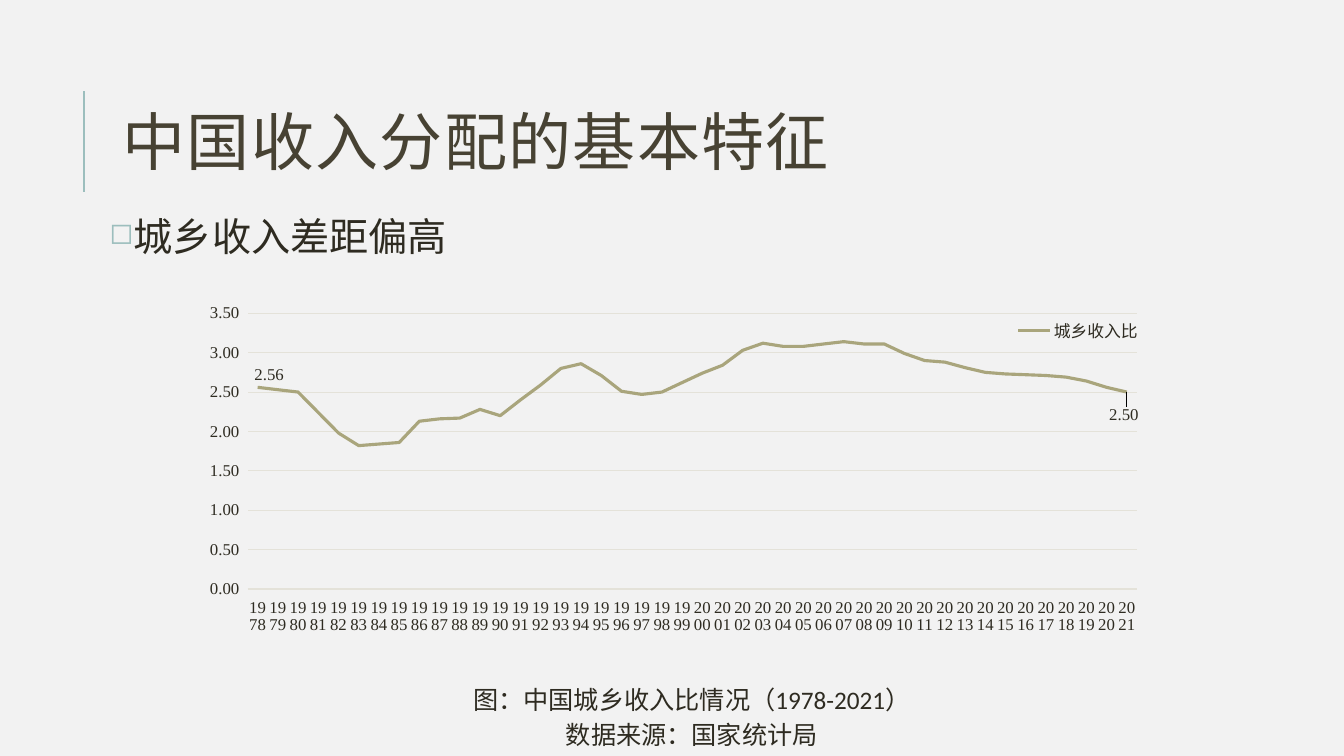
from lxml import etree
from pptx import Presentation, util as u
from pptx.chart.data import CategoryChartData
from pptx.dml.color import RGBColor
from pptx.enum import chart as ch, shapes, text
from pptx.oxml import parse_xml
from pptx.oxml.ns import nsdecls, qn

TITLE = "中国收入分配的基本特征"
POINT = "城乡收入差距偏高"
CAPTION = ["图：中国城乡收入比情况（1978-2021）", "数据来源：国家统计局"]
RATIO_NAME = "城乡收入比"
FIRST_YEAR = 1978
RATIOS = [
    2.56, 2.53, 2.50, 2.24, 1.98, 1.82, 1.84, 1.86, 2.13, 2.16, 2.17,
    2.28, 2.20, 2.40, 2.59, 2.80, 2.86, 2.71, 2.51, 2.47, 2.50, 2.62,
    2.74, 2.84, 3.03, 3.12, 3.08, 3.08, 3.11, 3.14, 3.11, 3.11, 2.99,
    2.90, 2.88, 2.81, 2.75, 2.73, 2.72, 2.71, 2.69, 2.64, 2.56, 2.50,
]
SCALE_FORMAT = r"#,##0.00_);[Red]\(#,##0.00\)"
# point index: (label position, shift right, shift down) as shares of the chart
END_LABELS = {
    0: (ch.XL_LABEL_POSITION.ABOVE, 0.012, 0),
    len(RATIOS) - 1: (ch.XL_LABEL_POSITION.BELOW, -0.003, 0.03),
}

BACKGROUND = RGBColor(0xF2, 0xF2, 0xF2)
TITLE_BROWN = RGBColor(0x47, 0x42, 0x33)
INK = RGBColor(0x2E, 0x2B, 0x21)
TEAL = RGBColor(0x9C, 0xBE, 0xBD)
OLIVE = RGBColor(0xA9, 0xA5, 0x7C)
GRID = RGBColor(0xE4, 0xE2, 0xD9)

NO_LEADER_LINES = f"""<c:extLst {nsdecls('c')}>
  <c:ext uri="{{CE6537A1-D6FC-4f65-9D91-7224C49458BB}}"
         xmlns:c15="http://schemas.microsoft.com/office/drawing/2012/chart">
    <c15:showLeaderLines val="0"/>
  </c:ext>
</c:extLst>"""


def add_text(slide, box, lines, size, color=INK, inset=0.13, spacing=0.9,
             align=text.PP_ALIGN.LEFT, before=0, after=0, tracking=0, bullet=None):
    """Add a middle-anchored text box; box is left, top, width, height in cm."""
    frame = slide.shapes.add_textbox(*map(u.Cm, box)).text_frame
    frame.word_wrap = True
    frame.vertical_anchor = text.MSO_ANCHOR.MIDDLE
    frame.margin_left = frame.margin_right = u.Cm(inset)
    frame.margin_top = frame.margin_bottom = u.Cm(inset)
    for number, line in enumerate(lines):
        paragraph = frame.add_paragraph() if number else frame.paragraphs[0]
        paragraph.alignment = align
        paragraph.line_spacing = spacing
        paragraph.space_before = u.Pt(before)
        paragraph.space_after = u.Pt(after)
        run = paragraph.add_run()
        run.text = line
        run.font.size = u.Pt(size)
        run.font.name = "Calibri"
        run.font.color.rgb = color
        if tracking:
            run._r.get_or_add_rPr().set("spc", str(tracking * 100))
        if bullet:
            props = paragraph._p.get_or_add_pPr()
            props.set("marL", str(u.Cm(0.25)))
            props.set("indent", str(u.Cm(0.25)))
            bullet_color = etree.SubElement(props, qn("a:buClr"))
            etree.SubElement(bullet_color, qn("a:srgbClr")).set("val", str(TEAL))
            etree.SubElement(props, qn("a:buSzPct")).set("val", "75000")
            etree.SubElement(props, qn("a:buChar")).set("char", bullet)


def manual_layout(**settings):
    """Build a c:layout element; settings must come in schema order."""
    layout = parse_xml(f"<c:layout {nsdecls('c')}><c:manualLayout/></c:layout>")
    for tag, value in settings.items():
        etree.SubElement(layout[0], qn(f"c:{tag}")).set("val", str(value))
    return layout


def style_font(font):
    font.size = u.Pt(12)
    font.name = "Times New Roman"
    font.color.rgb = INK


def style_line(line, color, width):
    line.color.rgb = color
    line.width = u.Pt(width)


def add_ratio_chart(slide):
    ratio_data = CategoryChartData(number_format="0.00")
    ratio_data.categories = range(FIRST_YEAR, FIRST_YEAR + len(RATIOS))
    ratio_data.add_series(RATIO_NAME, RATIOS)
    chart = slide.shapes.add_chart(
        ch.XL_CHART_TYPE.LINE, u.Cm(4.78), u.Cm(7.24), u.Cm(24.31), u.Cm(8.74),
        ratio_data).chart
    style_font(chart.font)
    chart.has_title = False

    plot_area = chart._chartSpace.chart.plotArea
    for old in plot_area.findall(qn("c:layout")):
        plot_area.remove(old)
    plot_area.insert(0, manual_layout(
        layoutTarget="inner", xMode="edge", yMode="edge",
        x=0.06, y=0.076, w=0.922, h=0.805))

    chart.has_legend = True
    chart.legend.position = ch.XL_LEGEND_POSITION.BOTTOM
    chart.legend.include_in_layout = False
    style_font(chart.legend.font)
    legend = chart.legend._element
    for old in legend.findall(qn("c:layout")):
        legend.remove(old)
    legend.find(qn("c:legendPos")).addnext(manual_layout(
        xMode="edge", yMode="edge", x=0.851, y=0.076, w=0.14, h=0.1))

    years, scale = chart.category_axis, chart.value_axis
    for axis in (years, scale):
        axis.major_tick_mark = axis.minor_tick_mark = ch.XL_TICK_MARK.NONE
        style_font(axis.tick_labels.font)
    years.tick_label_position = ch.XL_TICK_LABEL_POSITION.LOW
    years.tick_labels.number_format = "General"
    years.tick_labels.number_format_is_linked = False
    years.has_major_gridlines = False
    style_line(years.format.line, GRID, 0.75)
    years_xml = years._element
    years_xml.find(qn("c:txPr")).find(qn("a:bodyPr")).set("rot", "0")
    every_year = parse_xml(f'<c:tickLblSkip {nsdecls("c")} val="1"/>')
    years_xml.find(qn("c:noMultiLvlLbl")).addprevious(every_year)
    scale.minimum_scale, scale.maximum_scale, scale.major_unit = 0, 3.5, 0.5
    scale.tick_labels.number_format = SCALE_FORMAT
    scale.tick_labels.number_format_is_linked = False
    scale.format.line.fill.background()
    style_line(scale.major_gridlines.format.line, GRID, 0.75)

    chart.plots[0].vary_by_categories = False
    ratio = chart.plots[0].series[0]
    ratio.smooth = False
    ratio.marker.style = ch.XL_MARKER_STYLE.NONE
    style_line(ratio.format.line, OLIVE, 2.25)
    for index, (position, _, _) in END_LABELS.items():
        label = ratio.points[index].data_label
        style_font(label.font)
        label.position = position
    for label, (_, right, down) in zip(
            ratio._element.iter(qn("c:dLbl")), END_LABELS.values()):
        label.find(qn("c:idx")).addnext(manual_layout(x=right, y=down))
    ratio.data_labels.show_value = False
    ratio._element.find(qn("c:dLbls")).append(parse_xml(NO_LEADER_LINES))


def main():
    deck = Presentation()
    deck.slide_width, deck.slide_height = u.Cm(33.87), u.Cm(19.05)
    slide = deck.slides.add_slide(deck.slide_layouts[6])
    slide.background.fill.solid()
    slide.background.fill.fore_color.rgb = BACKGROUND

    title_rule = slide.shapes.add_connector(
        shapes.MSO_CONNECTOR.STRAIGHT, u.Cm(2.12), u.Cm(4.83), u.Cm(2.12), u.Cm(2.29))
    style_line(title_rule.line, TEAL, 1.5)
    etree.SubElement(title_rule._element.spPr, qn("a:effectLst"))

    add_text(slide, (2.84, 1.63, 27, 4.17), [TITLE], 45, color=TITLE_BROWN,
             inset=0.25, spacing=0.8, tracking=1)
    add_text(slide, (2.13, 5.25, 30.61, 1.6), [POINT], 28, spacing=0.8, bullet="◻")
    add_ratio_chart(slide)
    add_text(slide, (2.13, 17.11, 30.61, 2), CAPTION, 18,
             align=text.PP_ALIGN.CENTER, before=4, after=2)
    deck.save("out.pptx")


if __name__ == "__main__":
    main()
